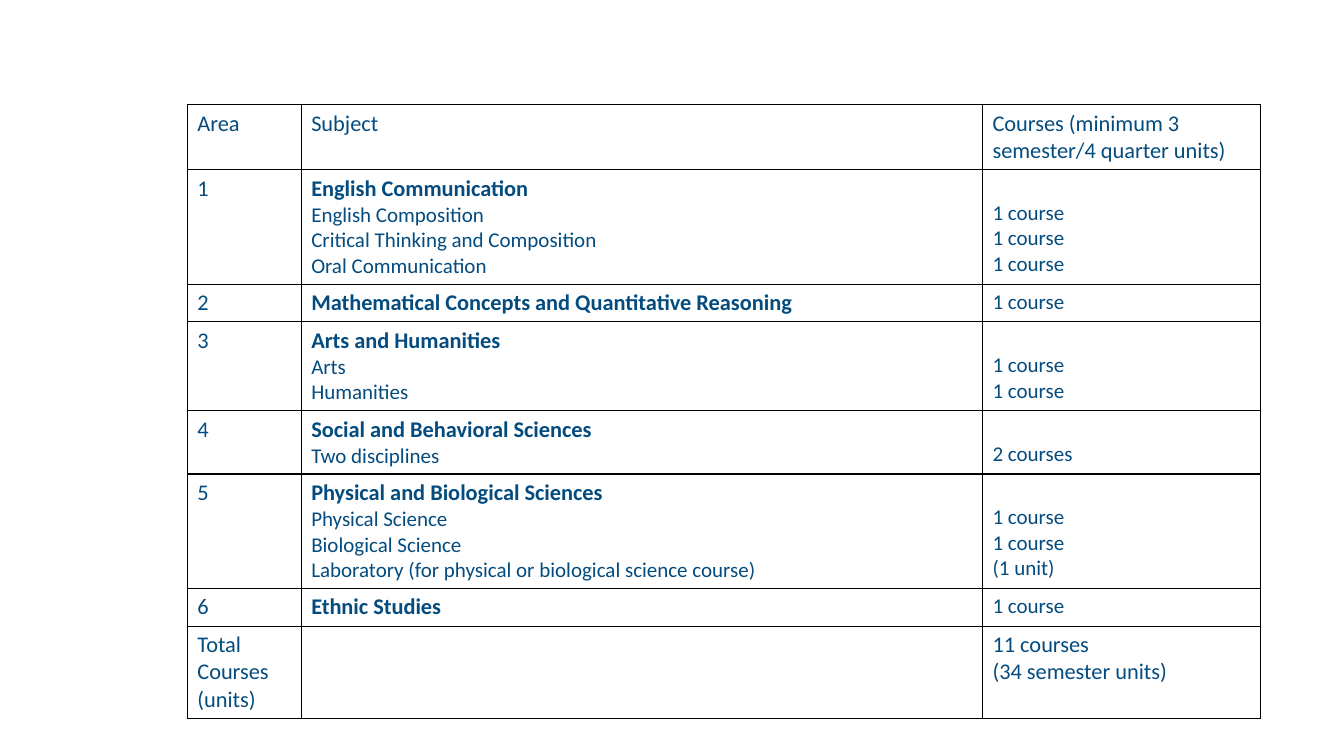
from lxml.etree import SubElement
from pptx import Presentation
from pptx.dml.color import RGBColor
from pptx.oxml.ns import qn
from pptx.util import Cm, Pt

FONT = "Calibri"
INK = "044C7F"
BORDER = "000000"
MAIN_SIZE, DETAIL_SIZE = 16, 15
BELOW_HEADING = Cm(0.77)  # top margin that starts the courses on the second line

COLUMN_WIDTHS = [2.87, 17.17, 7.01]
ROW_HEIGHTS = [1.6, 2.79, 0.94, 2.18, 1.55, 2.79, 0.94, 2.29]

# Each area: heading, subjects under it, courses
AREAS = [
    ("English Communication",
     ["English Composition", "Critical Thinking and Composition",
      "Oral Communication"],
     ["1 course", "1 course", "1 course"]),
    ("Mathematical Concepts and Quantitative Reasoning", [], ["1 course"]),
    ("Arts and Humanities", ["Arts", "Humanities"], ["1 course", "1 course"]),
    ("Social and Behavioral Sciences", ["Two disciplines"], ["2 courses"]),
    ("Physical and Biological Sciences",
     ["Physical Science", "Biological Science",
      "Laboratory (for physical or biological science course)"],
     ["1 course", "1 course", "(1 unit)"]),
    ("Ethnic Studies", [], ["1 course"]),
]


def color(hex_value):
    return RGBColor.from_string(hex_value)


def add_borders(cell):
    properties = cell._tc.get_or_add_tcPr()
    for side in ("a:lnL", "a:lnR", "a:lnT", "a:lnB"):
        line = SubElement(properties, qn(side), w=str(Pt(1)))
        fill = SubElement(line, qn("a:solidFill"))
        SubElement(fill, qn("a:srgbClr"), val=BORDER)


def write_lines(cell, lines, size=MAIN_SIZE, heading=False):
    """Write one paragraph a line; a heading is bold and larger than the rest."""
    frame = cell.text_frame
    for index, text in enumerate(lines):
        para = frame.paragraphs[0] if index == 0 else frame.add_paragraph()
        para.text = text
        is_heading = heading and index == 0
        font = para.font
        font.name = FONT
        font.size = Pt(MAIN_SIZE if is_heading else size)
        font.bold = is_heading
        font.color.rgb = color(INK)


def add_plain_table(page):
    """Add a table with black borders and no fill."""
    table = page.shapes.add_table(
        len(ROW_HEIGHTS), len(COLUMN_WIDTHS), Cm(4.72), Cm(2.64),
        Cm(sum(COLUMN_WIDTHS)), Cm(sum(ROW_HEIGHTS))).table
    table.first_row = table.horz_banding = False
    for column, width in zip(table.columns, COLUMN_WIDTHS):
        column.width = Cm(width)
    for row, height in zip(table.rows, ROW_HEIGHTS):
        row.height = Cm(height)
    for cell in table.iter_cells():
        add_borders(cell)
        cell.fill.background()
    return table


def fill_area(table, number, heading, subjects, courses):
    write_lines(table.cell(number, 0), [str(number)])
    write_lines(table.cell(number, 1), [heading, *subjects], DETAIL_SIZE, True)
    course_cell = table.cell(number, 2)
    write_lines(course_cell, courses, DETAIL_SIZE)
    if subjects:
        course_cell.margin_top = BELOW_HEADING


def main():
    deck = Presentation()
    deck.slide_width, deck.slide_height = Cm(33.87), Cm(19.05)
    page = deck.slides.add_slide(deck.slide_layouts[6])
    table = add_plain_table(page)

    # Header row
    headers = ["Area", "Subject", "Courses (minimum 3 semester/4 quarter units)"]
    for column, header in enumerate(headers):
        write_lines(table.cell(0, column), [header])

    # Area rows
    for number, area in enumerate(AREAS, start=1):
        fill_area(table, number, *area)

    # Total row
    total = len(ROW_HEIGHTS) - 1
    write_lines(table.cell(total, 0), ["Total Courses (units)"])
    write_lines(table.cell(total, 2), ["11 courses", "(34 semester units)"])

    deck.save("out.pptx")


if __name__ == "__main__":
    main()
